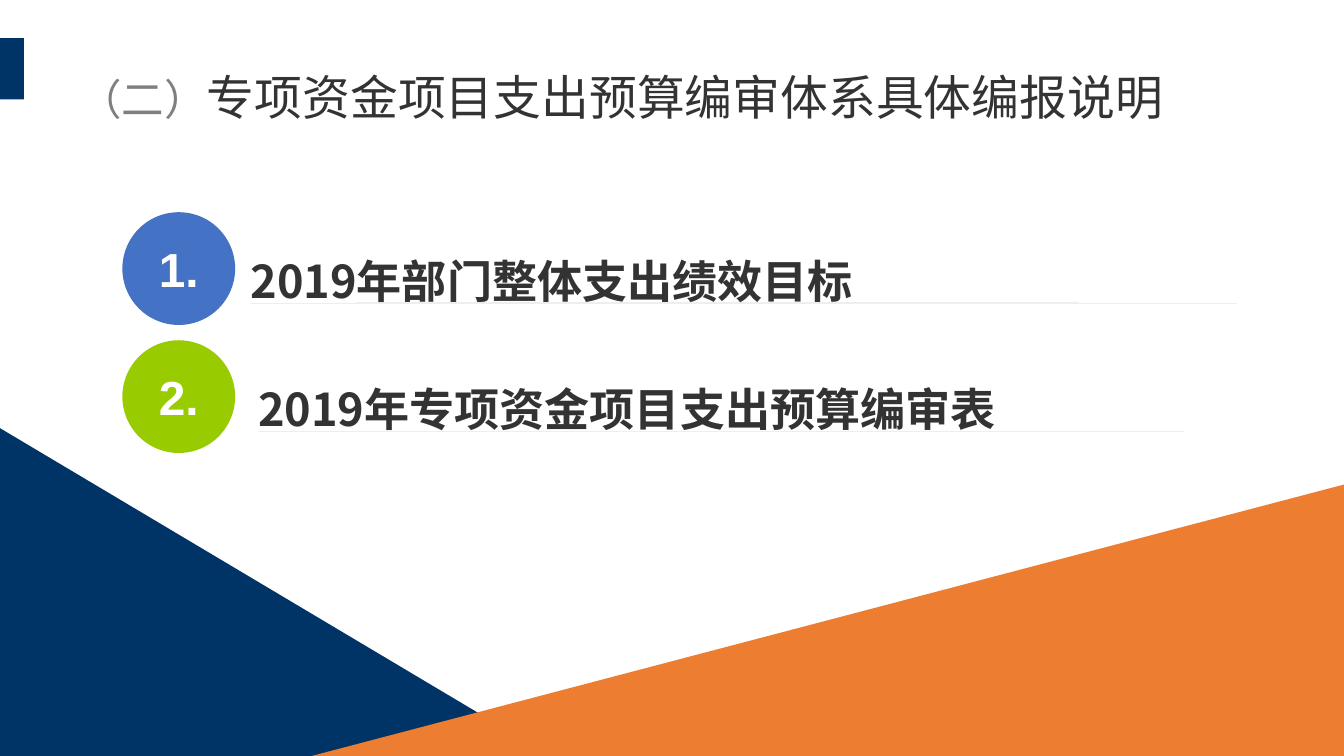
from dataclasses import dataclass

from lxml import etree
from pptx import Presentation
from pptx.dml.color import RGBColor
from pptx.enum import shapes, text
from pptx.oxml import ns
from pptx.util import Pt

WIDE, HIGH = 1012.32, 569.52
NAVY = RGBColor(0x00, 0x33, 0x66)
ORANGE = RGBColor(0xED, 0x7D, 0x31)
BLUE = RGBColor(0x44, 0x72, 0xC4)
GREEN = RGBColor(0x99, 0xCC, 0x00)
GRAY = RGBColor(0x7F, 0x7F, 0x7F)
DARK = RGBColor(0x33, 0x33, 0x33)
WHITE = RGBColor(0xFF, 0xFF, 0xFF)
HAN = "Noto Sans CJK SC"
DISC, DISC_X = 84.96, 92.16


@dataclass
class Rule:
    left: float
    top: float
    right: float
    base: float
    label: str = ""


@dataclass
class Badge:
    label: str
    top: float
    color: RGBColor


RULES = [
    Rule(194.4, 277.92, 892.08, 325.44, "2019年专项资金项目支出预算编审表"),
    Rule(267.84, 171.36, 812.16, 227.52),
    Rule(188.64, 180.72, 931.68, 228.96, "2019年部门整体支出绩效目标"),
]
BADGES = [Badge("2.", 256.32, GREEN), Badge("1.", 159.84, BLUE)]
CORNERS = [
    (NAVY, [(0, 322.56), (414.72, HIGH), (0, HIGH)]),
    (ORANGE, [(WIDE, 365.04), (WIDE, HIGH), (234.72, HIGH)]),
]


def write(para, words: str, *, size: float, color: RGBColor,
          font: str = HAN, bold: bool = False) -> None:
    run = para.add_run()
    run.text = words
    run.font.size = Pt(size)
    run.font.bold = bold
    run.font.color.rgb = color
    run.font.name = font
    etree.SubElement(run.font._element, ns.qn("a:ea"), typeface=font)


def paint(shape, color: RGBColor):
    shape.shadow.inherit = False
    shape.fill.solid()
    shape.fill.fore_color.rgb = color
    shape.line.fill.background()
    return shape


def begin(shape, align: text.PP_ALIGN):
    """Clear the insets, centre the text vertically and give its paragraph."""
    frame = shape.text_frame
    frame.margin_left = frame.margin_right = 0
    frame.margin_top = frame.margin_bottom = 0
    frame.vertical_anchor = text.MSO_ANCHOR.MIDDLE
    frame.word_wrap = True
    frame.paragraphs[0].alignment = align
    return frame.paragraphs[0]


def outline(slide, color: RGBColor, *loops: list[tuple[float, float]]):
    rings = [[(Pt(x), Pt(y)) for x, y in loop] for loop in loops]
    pen = slide.shapes.build_freeform(*rings[0][0])
    for ring in rings:
        if ring is not rings[0]:
            pen.move_to(*ring[0])
        pen.add_line_segments(ring[1:], close=True)
    return paint(pen.convert_to_shape(), color)


def draw_rule(slide, rule: Rule) -> None:
    left, top, base = rule.left, rule.top, rule.base
    shape = outline(slide, GRAY,
                    [(left, base), (rule.right, base), (left, base)],
                    [(left, top), (left + 0.5, top), (left, top)])
    if rule.label:
        para = begin(shape, text.PP_ALIGN.LEFT)
        para.line_spacing = 1.3
        shape.text_frame.auto_size = text.MSO_AUTO_SIZE.SHAPE_TO_FIT_TEXT
        write(para, rule.label, size=34, color=DARK, bold=True)


def draw_badge(slide, badge: Badge) -> None:
    disc = slide.shapes.add_shape(shapes.MSO_SHAPE.OVAL, Pt(DISC_X),
                                  Pt(badge.top), Pt(DISC), Pt(DISC))
    para = begin(paint(disc, badge.color), text.PP_ALIGN.CENTER)
    write(para, badge.label, size=36, color=WHITE, font="Arial", bold=True)


def draw_title(slide) -> None:
    title = slide.shapes.title
    title.left, title.top = Pt(52.56), Pt(52.56)
    title.width, title.height = Pt(911.52), Pt(78.48)
    frame = title.text_frame
    frame.vertical_anchor = text.MSO_ANCHOR.TOP
    frame.auto_size = text.MSO_AUTO_SIZE.NONE
    frame.word_wrap = True
    para = frame.paragraphs[0]
    para.alignment = text.PP_ALIGN.LEFT
    para.line_spacing = 0.9
    write(para, "（二）", size=32, color=GRAY)
    write(para, "专项资金项目支出预算编审体系具体编报说明", size=36, color=DARK)


def main() -> None:
    deck = Presentation()
    deck.slide_width, deck.slide_height = Pt(WIDE), Pt(HIGH)
    slide = deck.slides.add_slide(deck.slide_layouts[5])

    # Heading with its side tab
    draw_title(slide)
    tab = slide.shapes.add_shape(shapes.MSO_SHAPE.RECTANGLE, 0, Pt(28.8),
                                 Pt(18), Pt(46.08))
    paint(tab, NAVY)

    # Corner triangles
    for color, points in CORNERS:
        outline(slide, color, points)

    # Numbered items on hairlines
    for rule in RULES:
        draw_rule(slide, rule)
    for badge in BADGES:
        draw_badge(slide, badge)

    deck.save("out.pptx")


if __name__ == "__main__":
    main()
